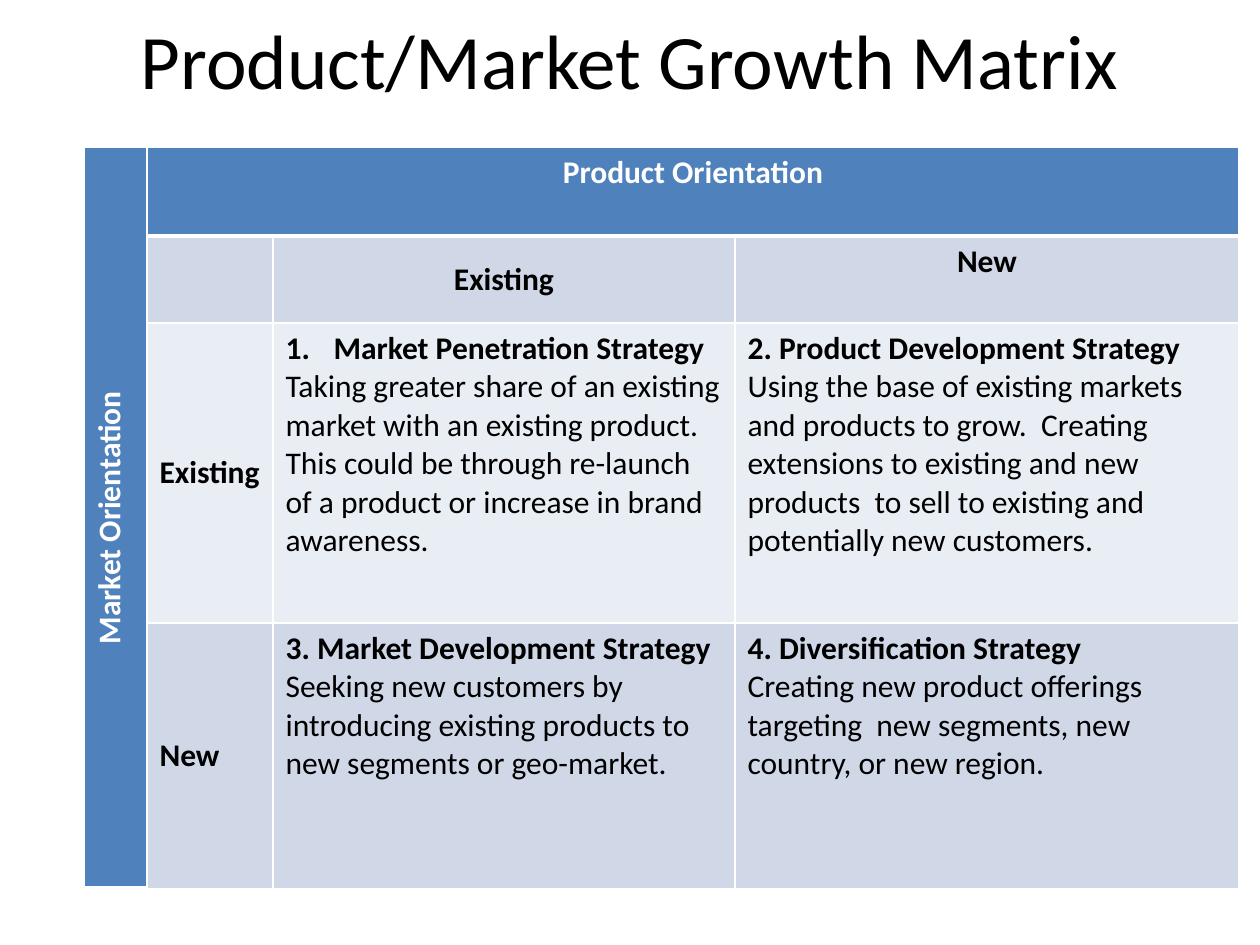
"""Build the product/market growth matrix slide."""
from dataclasses import dataclass

from lxml import etree
from pptx import Presentation
from pptx.dml.color import RGBColor
from pptx.enum.text import MSO_ANCHOR, PP_ALIGN
from pptx.oxml.ns import qn
from pptx.util import Pt

LEFT, CENTER = PP_ALIGN.LEFT, PP_ALIGN.CENTER
TOP, MIDDLE = MSO_ANCHOR.TOP, MSO_ANCHOR.MIDDLE
EMU_PER_PIXEL = 914400 / 126
FONT = "Calibri"
BLACK, WHITE = "000000", "FFFFFF"
HEADER, BAND, PALE = "4F81BD", "D0D8E8", "E9EDF4"
COLUMN_WIDTHS = (63, 126, 462, 504)
ROW_HEIGHTS = (89, 87, 300, 238)
ROW_FILLS = (HEADER, BAND, PALE, BAND)
NUMBER_INDENT = 48


@dataclass(frozen=True)
class Label:
    """A bold heading cell."""
    row: int
    column: int
    text: str
    align: PP_ALIGN = CENTER
    anchor: MSO_ANCHOR = MIDDLE
    color: str = BLACK


@dataclass(frozen=True)
class Strategy:
    """A quadrant with a bold heading and plain body paragraphs."""
    row: int
    column: int
    heading: str
    body: tuple[str, ...]
    numbered: bool = False


LABELS = (
    Label(0, 0, "Market Orientation", anchor=TOP, color=WHITE),
    Label(0, 1, "Product Orientation", anchor=TOP, color=WHITE),
    Label(1, 2, "Existing"),
    Label(1, 3, "New", anchor=TOP),
    Label(2, 1, "Existing", align=LEFT),
    Label(3, 1, "New", align=LEFT),
)
STRATEGIES = (
    Strategy(2, 2, "Market Penetration Strategy", (
        "Taking greater share of an existing market with an existing product.",
        "This could be through re-launch of a product or increase in brand awareness.",
    ), numbered=True),
    Strategy(2, 3, "2. Product Development Strategy", (
        "Using the base of existing markets and products to grow.  Creating extensions "
        "to existing and new products  to sell to existing and potentially new customers.",
    )),
    Strategy(3, 2, "3. Market Development Strategy", (
        "Seeking new customers by introducing existing products to new segments "
        "or geo-market.",
    )),
    Strategy(3, 3, "4. Diversification Strategy", (
        "Creating new product offerings targeting  new segments, new country, "
        "or new region.",
    )),
)


def px(length: int) -> int:
    """Turn pixels into EMU."""
    return round(length * EMU_PER_PIXEL)


def rgb(color: str) -> RGBColor:
    """Turn a hex string into a colour."""
    return RGBColor.from_string(color)


def place(shape, left: int, top: int, width: int, height: int) -> None:
    """Set the position and size of a shape."""
    bounds = {"left": left, "top": top, "width": width, "height": height}
    for name, length in bounds.items():
        setattr(shape, name, px(length))


def write(para, text: str, size: int = 18, bold: bool = False,
          color: str = BLACK, align: PP_ALIGN = LEFT) -> None:
    """Write one formatted span into a paragraph."""
    para.alignment = align
    span = para.add_run()
    span.text = text
    formats = {"name": FONT, "size": Pt(size), "bold": bold}
    for name, value in formats.items():
        setattr(span.font, name, value)
    span.font.color.rgb = rgb(color)


def number(para) -> None:
    """Give a paragraph automatic numbering with a hanging indent."""
    properties = para._p.get_or_add_pPr()
    properties.set("marL", str(px(NUMBER_INDENT)))
    properties.set("indent", str(-px(NUMBER_INDENT)))
    etree.SubElement(properties, qn("a:buFont"), typeface="+mj-lt")
    etree.SubElement(properties, qn("a:buAutoNum"), type="arabicPeriod")


def style_cell(cell, fill: str, bottom_width: int) -> None:
    """Fill a cell and draw its white borders."""
    properties = cell._tc.get_or_add_tcPr()
    widths = {"a:lnL": 1, "a:lnR": 1, "a:lnT": 1, "a:lnB": bottom_width}
    for tag, width in widths.items():
        line = etree.SubElement(properties, qn(tag), w=str(Pt(width)))
        solid = etree.SubElement(line, qn("a:solidFill"))
        etree.SubElement(solid, qn("a:srgbClr"), val=WHITE)
    cell.fill.solid()
    cell.fill.fore_color.rgb = rgb(fill)


def draw_label(table, label: Label) -> None:
    """Write a heading cell."""
    cell = table.cell(label.row, label.column)
    cell.vertical_anchor = label.anchor
    write(cell.text_frame.paragraphs[0], label.text, bold=True,
          color=label.color, align=label.align)


def draw_strategy(table, strategy: Strategy) -> None:
    """Write a quadrant cell."""
    frame = table.cell(strategy.row, strategy.column).text_frame
    heading = frame.paragraphs[0]
    if strategy.numbered:
        number(heading)
    write(heading, strategy.heading, bold=True)
    for text in strategy.body:
        write(frame.add_paragraph(), text)


def draw_matrix(page) -> None:
    """Draw the whole matrix table."""
    table = page.shapes.add_table(
        len(ROW_HEIGHTS), len(COLUMN_WIDTHS), px(84), px(147),
        px(sum(COLUMN_WIDTHS)), px(sum(ROW_HEIGHTS))).table
    for column, width in zip(table.columns, COLUMN_WIDTHS):
        column.width = px(width)
    for index, (row, height) in enumerate(zip(table.rows, ROW_HEIGHTS)):
        row.height = px(height)
        for position, cell in enumerate(row.cells):
            fill = ROW_FILLS[index] if position else HEADER
            style_cell(cell, fill, 1 if index else 3)
    side = table.cell(0, 0)
    side.merge(table.cell(3, 0))
    side._tc.get_or_add_tcPr().set("vert", "vert270")
    table.cell(0, 1).merge(table.cell(0, 3))
    for label in LABELS:
        draw_label(table, label)
    for strategy in STRATEGIES:
        draw_strategy(table, strategy)


def main() -> None:
    """Build and save the deck."""
    deck = Presentation()
    deck.slide_width, deck.slide_height = px(1260), px(945)
    page = deck.slides.add_slide(deck.slide_layouts[5])
    title = page.shapes.title
    place(title, 63, 1, 1134, 115)
    title.text_frame.vertical_anchor = MIDDLE
    write(title.text_frame.paragraphs[0], "Product/Market Growth Matrix",
          size=44, align=CENTER)
    draw_matrix(page)
    deck.save("out.pptx")


if __name__ == "__main__":
    main()
